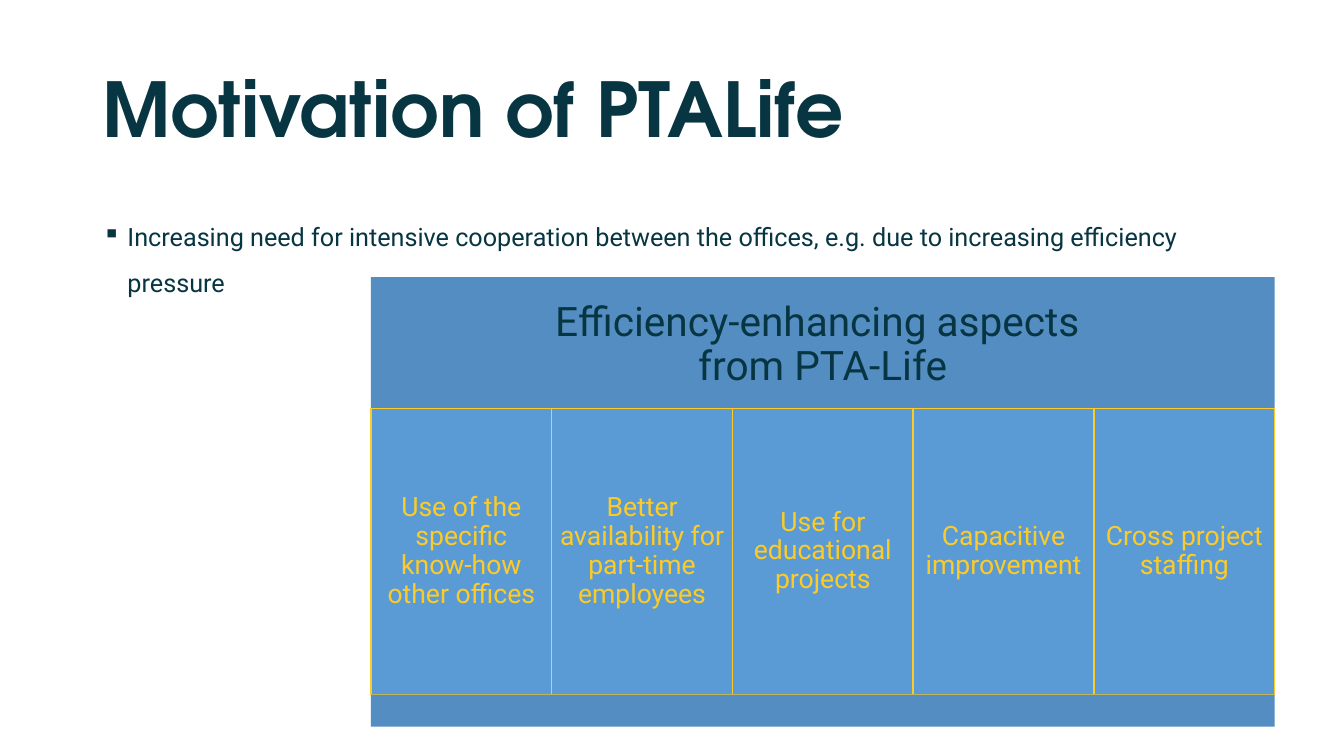
from dataclasses import dataclass

from lxml import etree
from pptx import Presentation
from pptx.dml.color import RGBColor
from pptx.enum.shapes import MSO_SHAPE as Preset
from pptx.enum.text import MSO_ANCHOR as Anchor, PP_ALIGN as Align
from pptx.oxml.ns import qn
from pptx.shapes.autoshape import Shape
from pptx.slide import Slide
from pptx.util import Pt

INK = RGBColor(0x07, 0x36, 0x42)
YELLOW = RGBColor(0xFD, 0xCB, 0x26)
BAND_BLUE = RGBColor(0x53, 0x8D, 0xC1)
COLUMN_BLUE = RGBColor(0x5B, 0x9B, 0xD5)

BODY_FONT = "Roboto"
TITLE_FONT = "TeX Gyre Adventor"

PANEL_LEFT = 264.96
PANEL_WIDTH = 645.6
COLUMN_TOP = 291.6
COLUMN_HEIGHT = 204.5

ASPECTS = (
    "Use of the specific know-how other offices",
    "Better availability for part-time employees",
    "Use for educational projects",
    "Capacitive improvement",
    "Cross project staffing",
)


@dataclass(frozen=True)
class Box:
    left: float
    top: float
    width: float
    height: float


@dataclass(frozen=True)
class TextStyle:
    size: float
    color: RGBColor
    font: str = BODY_FONT
    bold: bool = False
    align: Align = Align.LEFT
    anchor: Anchor = Anchor.MIDDLE
    line_spacing: float = 0.9
    inset_x: float = 7.2
    inset_y: float = 3.6
    bullet: str = ""


@dataclass(frozen=True)
class Panel:
    box: Box
    fill: RGBColor
    line: RGBColor | None = None
    lines: tuple[str, ...] = ()
    style: TextStyle | None = None


TITLE = TextStyle(54, INK, font=TITLE_FONT, bold=True)
BODY = TextStyle(18, INK, anchor=Anchor.TOP, line_spacing=1.5, bullet="▪")
HEADER = TextStyle(29, INK, align=Align.CENTER, inset_x=8.64, inset_y=8.64)
ASPECT = TextStyle(19, YELLOW, align=Align.CENTER, inset_x=5.76, inset_y=5.76)


def write_text(shape: Shape, lines: tuple[str, ...], style: TextStyle) -> None:
    frame = shape.text_frame
    frame.word_wrap = True
    frame.vertical_anchor = style.anchor
    frame.margin_left = frame.margin_right = Pt(style.inset_x)
    frame.margin_top = frame.margin_bottom = Pt(style.inset_y)
    paragraph = frame.paragraphs[0]
    paragraph.alignment = style.align
    paragraph.line_spacing = style.line_spacing
    if style.bullet:
        properties = paragraph._p.get_or_add_pPr()
        properties.set("marL", str(Pt(18)))
        properties.set("indent", str(Pt(-18)))
        etree.SubElement(properties, qn("a:buChar"), char=style.bullet)
    for index, line in enumerate(lines):
        if index:
            paragraph.add_line_break()
        run = paragraph.add_run()
        run.text = line
        run.font.name = style.font
        run.font.size = Pt(style.size)
        run.font.bold = style.bold
        run.font.color.rgb = style.color


def add_panel(slide: Slide, panel: Panel) -> None:
    box = panel.box
    shape = slide.shapes.add_shape(
        Preset.RECTANGLE, Pt(box.left), Pt(box.top), Pt(box.width), Pt(box.height)
    )
    shape.shadow.inherit = False
    shape.fill.solid()
    shape.fill.fore_color.rgb = panel.fill
    if panel.line is None:
        shape.line.fill.background()
    else:
        shape.line.color.rgb = panel.line
        shape.line.width = Pt(1)
    if panel.style is not None:
        write_text(shape, panel.lines, panel.style)


def add_text(slide: Slide, box: Box, text: str, style: TextStyle) -> None:
    shape = slide.shapes.add_textbox(
        Pt(box.left), Pt(box.top), Pt(box.width), Pt(box.height)
    )
    write_text(shape, (text,), style)


def build_panels() -> list[Panel]:
    column_width = PANEL_WIDTH / len(ASPECTS)
    header = Panel(
        Box(PANEL_LEFT, 198, PANEL_WIDTH, 97.2),
        BAND_BLUE,
        lines=("Efficiency-enhancing aspects ", "from PTA-Life"),
        style=HEADER,
    )
    columns = [
        Panel(
            Box(PANEL_LEFT + index * column_width, COLUMN_TOP, column_width, COLUMN_HEIGHT),
            COLUMN_BLUE,
            YELLOW,
            (aspect,),
            ASPECT,
        )
        for index, aspect in enumerate(ASPECTS)
    ]
    footer = Panel(
        Box(PANEL_LEFT, COLUMN_TOP + COLUMN_HEIGHT, PANEL_WIDTH, 23), BAND_BLUE
    )
    return [header, *columns, footer]


def main() -> None:
    presentation = Presentation()
    presentation.slide_width = Pt(960)
    presentation.slide_height = Pt(540)
    slide = presentation.slides.add_slide(presentation.slide_layouts[6])
    for panel in build_panels():
        add_panel(slide, panel)
    add_text(slide, Box(66, 28.8, 828, 104.4), "Motivation of PTALife", TITLE)
    add_text(
        slide,
        Box(66, 144, 828, 342.6),
        "Increasing need for intensive cooperation between the offices, "
        "e.g. due to increasing efficiency pressure",
        BODY,
    )
    presentation.save("out.pptx")


if __name__ == "__main__":
    main()
